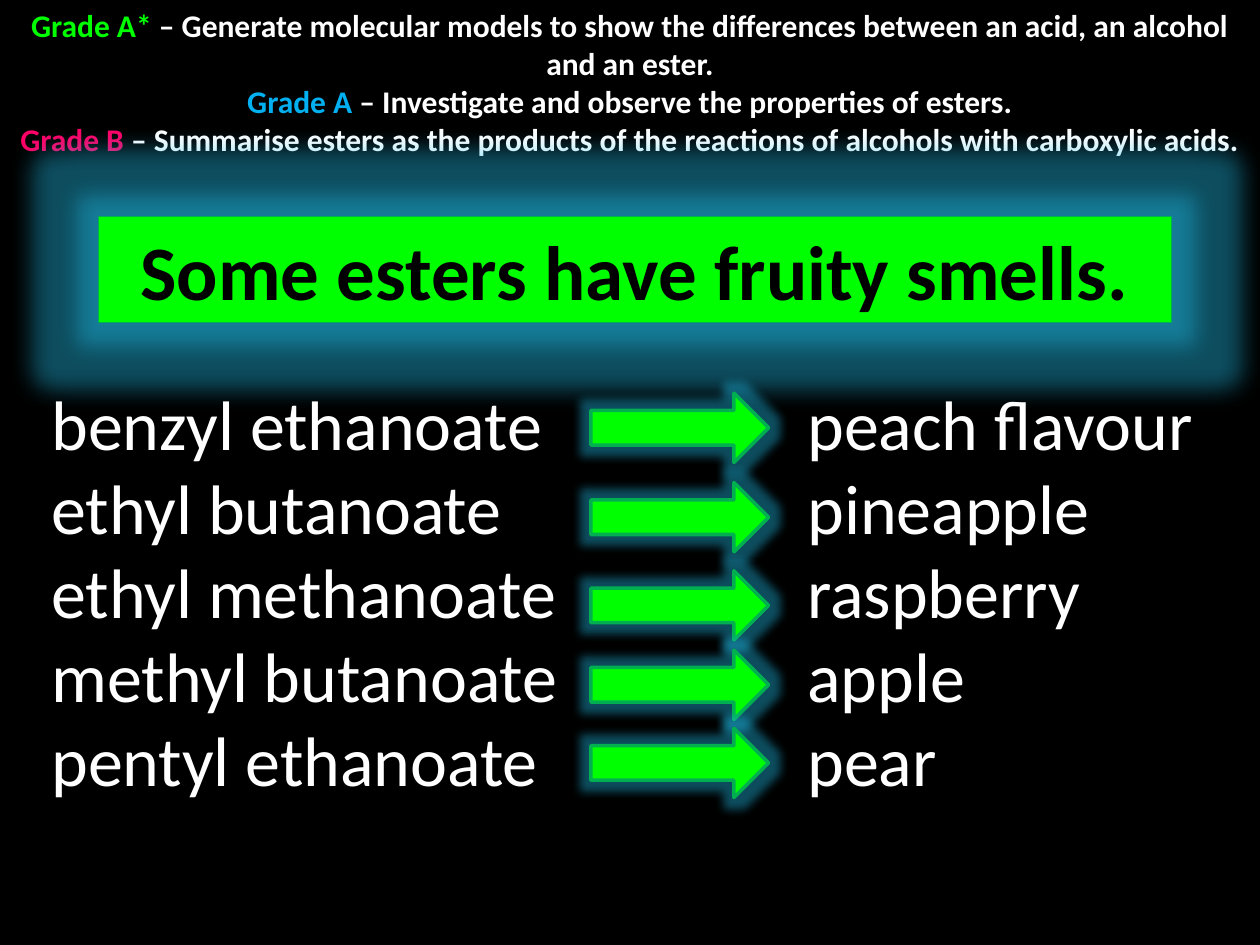
from lxml.etree import SubElement
from pptx import Presentation
from pptx.dml.color import RGBColor
from pptx.enum.shapes import MSO_SHAPE
from pptx.enum.text import MSO_ANCHOR, PP_ALIGN
from pptx.oxml.ns import qn
from pptx.util import Inches, Pt

BLACK = RGBColor(0x00, 0x00, 0x00)
WHITE = RGBColor(0xFF, 0xFF, 0xFF)
LIME = RGBColor(0x00, 0xFF, 0x00)
GREEN = RGBColor(0x00, 0xB0, 0x50)
BLUE = RGBColor(0x00, 0xB0, 0xF0)
PINK = RGBColor(0xFF, 0x00, 0x66)
GLOW = RGBColor(0x21, 0xC1, 0xED)


def add_box(left, top, width, height):
    box = slide.shapes.add_textbox(Inches(left), Inches(top), Inches(width), Inches(height))
    box.text_frame.word_wrap = True
    return box.text_frame


def add_glowing(kind, left, top, width, height, line, radius):
    shape = slide.shapes.add_shape(
        kind, Inches(left), Inches(top), Inches(width), Inches(height))
    shape.fill.solid()
    shape.fill.fore_color.rgb = LIME
    shape.line.color.rgb = GREEN
    shape.line.width = Pt(line)
    shape.shadow.inherit = False
    effects = shape._element.spPr.find(qn("a:effectLst"))
    glow = SubElement(effects, qn("a:glow"), rad=str(Inches(radius)))
    color = SubElement(glow, qn("a:srgbClr"), val=str(GLOW))
    SubElement(color, qn("a:alpha"), val="40000")
    return shape


deck = Presentation()
deck.slide_width, deck.slide_height = Inches(10), Inches(7.5)
slide = deck.slides.add_slide(deck.slide_layouts[6])
slide.background.fill.solid()
slide.background.fill.fore_color.rgb = BLACK

# Learning goals by grade
goals = [
    ("Grade A* ", LIME, "– Generate molecular models to show the differences "
     "between an acid, an alcohol and an ester."),
    ("Grade A ", BLUE, "– Investigate and observe the properties of esters."),
    ("Grade B ", PINK, "– Summarise esters as the products of the reactions "
     "of alcohols with carboxylic acids."),
]
frame = add_box(0, 0, 10, 1.31)
for i, (grade, color, goal) in enumerate(goals):
    para = frame.add_paragraph() if i else frame.paragraphs[0]
    para.alignment = PP_ALIGN.CENTER
    para.font.name, para.font.size, para.font.bold = "Calibri", Pt(18), True
    for text, tint in ((grade, color), (goal, WHITE)):
        run = para.add_run()
        run.text = text
        run.font.color.rgb = tint

# Banner
banner = add_glowing(MSO_SHAPE.RECTANGLE, 0.78, 1.72, 8.52, 0.84, 0.75, 0.36)
banner.text_frame.vertical_anchor = MSO_ANCHOR.MIDDLE
para = banner.text_frame.paragraphs[0]
para.text = "Some esters have fruity smells."
para.alignment = PP_ALIGN.CENTER
para.font.name, para.font.size, para.font.bold = "Calibri", Pt(44), True
para.font.color.rgb = BLACK

# Esters and their smells, the smell set at a tab stop
smells = [
    ("benzyl ethanoate", "peach flavour", 3.12),
    ("ethyl butanoate", "pineapple", 3.83),
    ("ethyl methanoate", "raspberry", 4.53),
    ("methyl butanoate", "apple", 5.16),
    ("pentyl ethanoate", "pear", 5.78),
]
frame = add_box(0.31, 2.97, 9.38, 3.47)
for i, (ester, smell, top) in enumerate(smells):
    para = frame.add_paragraph() if i else frame.paragraphs[0]
    para.text = f"{ester}\t{smell}"
    tabs = SubElement(para._p.get_or_add_pPr(), qn("a:tabLst"))
    SubElement(tabs, qn("a:tab"), pos=str(Inches(6)), algn="l")
    para.font.name, para.font.size = "Calibri", Pt(40)
    para.font.color.rgb = WHITE
    add_glowing(MSO_SHAPE.RIGHT_ARROW, 4.69, top, 1.41, 0.55, 2, 0.15)

deck.save("out.pptx")
